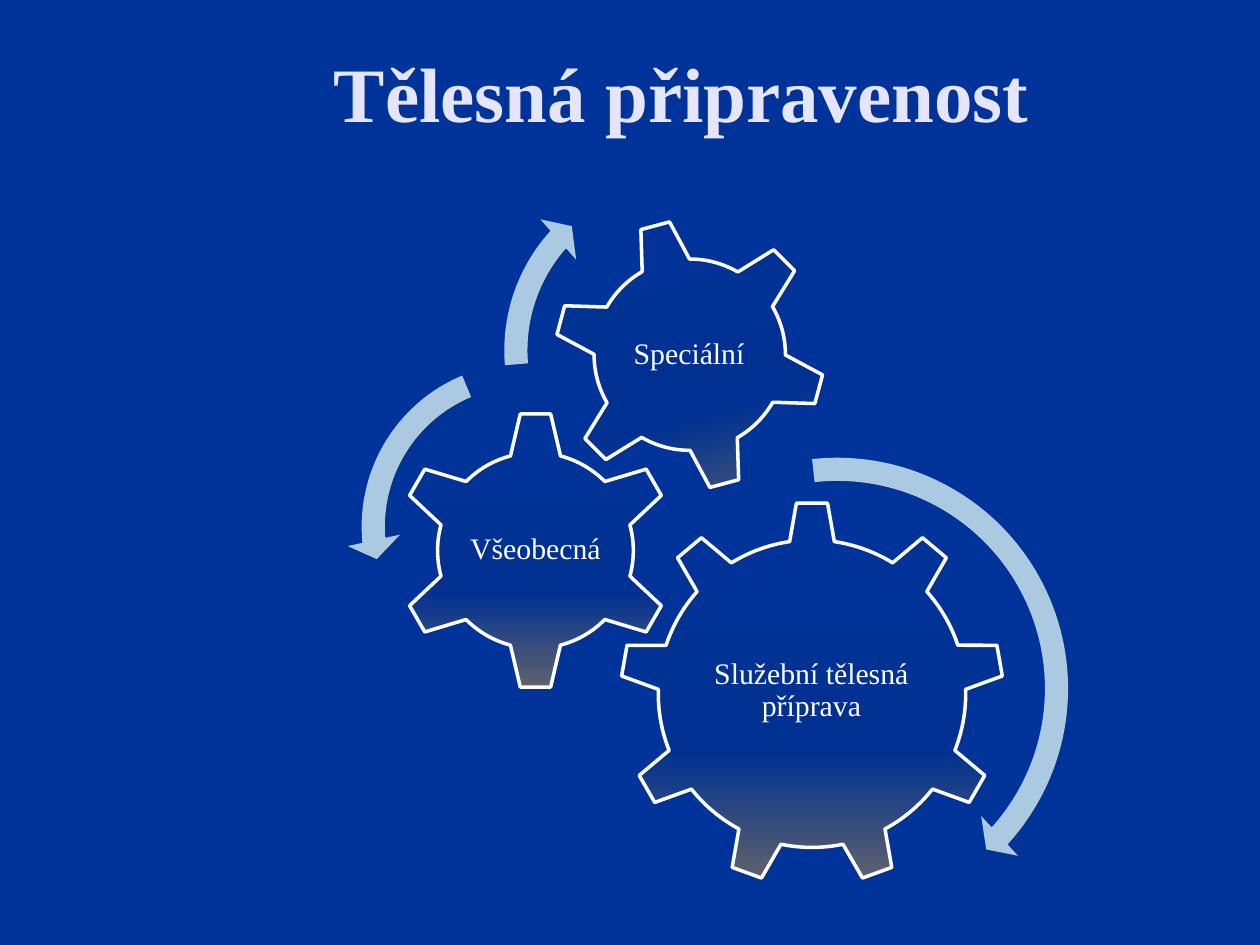
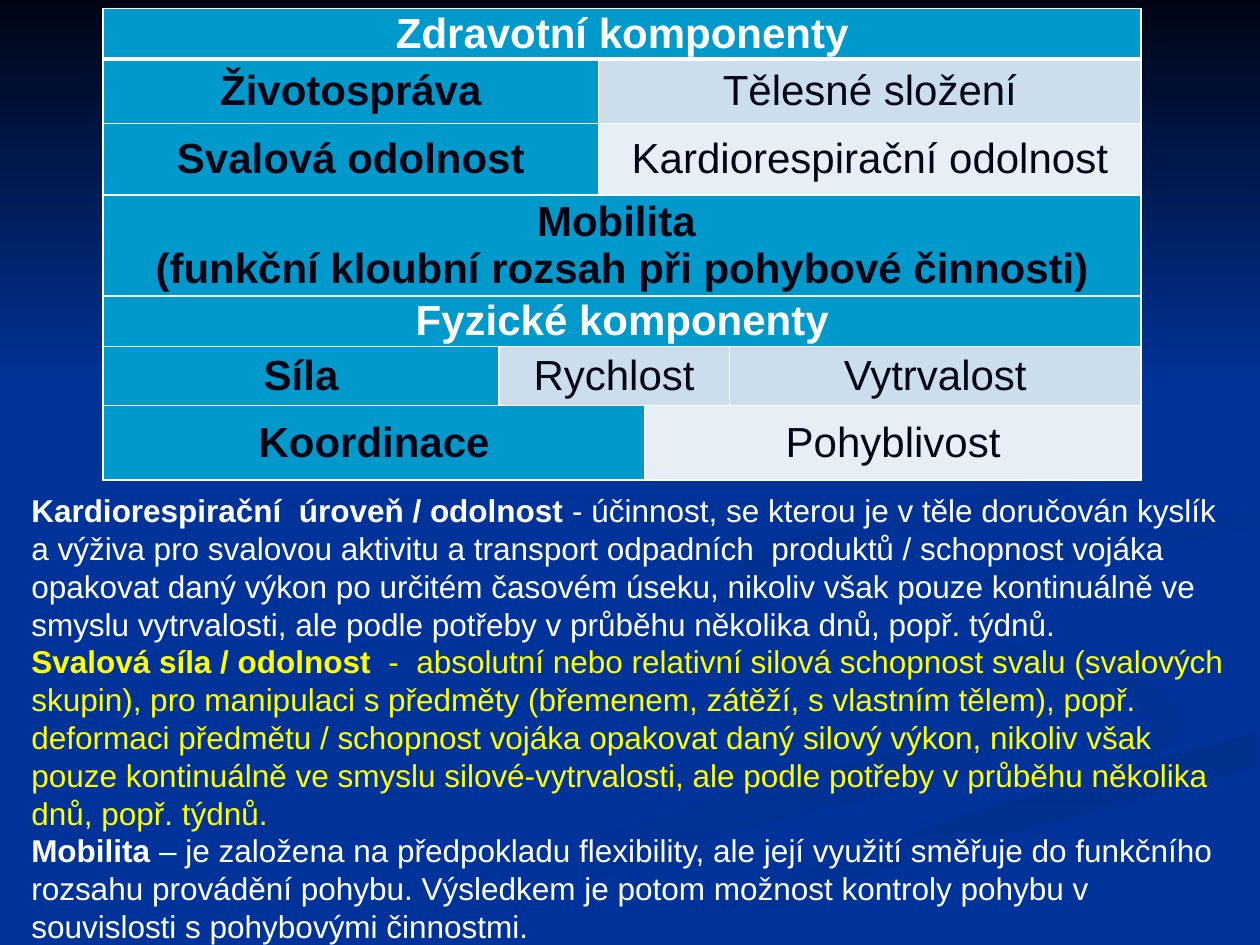
from lxml import etree
from pptx import Presentation
from pptx.dml.color import RGBColor
from pptx.enum.shapes import MSO_SHAPE
from pptx.enum.text import MSO_ANCHOR, PP_ALIGN
from pptx.oxml import parse_xml
from pptx.oxml.ns import nsdecls, qn
from pptx.util import Pt

CENTER = PP_ALIGN.CENTER
MIDDLE = MSO_ANCHOR.MIDDLE
GEAR_6 = MSO_SHAPE.GEAR_6
GEAR_9 = MSO_SHAPE.GEAR_9
ARROW = MSO_SHAPE.CIRCULAR_ARROW
LEFT_ARROW = MSO_SHAPE.LEFT_CIRCULAR_ARROW
RECTANGLE = MSO_SHAPE.RECTANGLE

SERIF = "Times New Roman"
SANS = "Arial"
COLORS = {
    "background": "003399",
    "night": "000514",
    "title": "E5E5FF",
    "white": "FFFFFF",
    "yellow": "FFFF00",
    "gear_mid": "003192",
    "gear_end": "646468",
    "arrow": "ABCAE2",
    "header": "0099CC",
    "pale": "CCDEEC",
    "paler": "E7EFF6",
    "swoosh": "003193",
    "swoosh_dark": "002F8C",
    "swoosh_soft": "003091",
}


def paint(shape, stops, angle=0):
    shape.shadow.inherit = False
    shape.line.fill.background()
    shape.fill.solid()
    shape.fill.fore_color.rgb = RGBColor.from_string(COLORS[stops[0][1]])
    if len(stops) > 1:
        marks = "".join(
            f'<a:gs pos="{pos * 1000}"><a:srgbClr val="{COLORS[color]}"/></a:gs>'
            for pos, color in stops)
        solid = shape._element.spPr.find(qn("a:solidFill"))
        solid.getparent().replace(solid, parse_xml(
            f'<a:gradFill rotWithShape="1" {nsdecls("a")}><a:gsLst>{marks}</a:gsLst>'
            f'<a:lin ang="{angle * 60000}" scaled="0"/></a:gradFill>'))


def style(font, size, face, color, bold=False):
    font.size = Pt(size)
    font.name = face
    font.bold = bold
    font.color.rgb = RGBColor.from_string(COLORS[color])


prs = Presentation()
prs.slide_width, prs.slide_height = Pt(720), Pt(540)
backdrop = prs.slide_master.background.fill
backdrop.solid()
backdrop.fore_color.rgb = RGBColor.from_string(COLORS["background"])
blank = prs.slide_layouts[6]

fitness = prs.slides.add_slide(blank)
title = fitness.shapes.add_textbox(Pt(129.6), Pt(16.6), Pt(520), Pt(72)).text_frame
title.word_wrap = True
title.vertical_anchor = MIDDLE
title.text = "Tělesná připravenost"
title.paragraphs[0].alignment = CENTER
style(title.paragraphs[0].runs[0].font, 44, SERIF, "title", True)

gears = [
    ("Služební tělesná příprava", GEAR_9, (354.2, 286.6, 219.6), 0, (398.2, 338.4, 131, 113)),
    ("Všeobecná", GEAR_6, (226.1, 234.7, 159.8), 0, (266.4, 275, 79.2, 78.5)),
    ("Speciální", GEAR_6, (316.1, 124.6, 156.2), 345, (349.9, 159.1, 87.8, 87.8)),
]
for label, kind, (left, top, side), turn, label_box in gears:
    gear = fitness.shapes.add_shape(kind, Pt(left), Pt(top), Pt(side), Pt(side))
    gear.rotation = turn
    paint(gear, [(0, "background"), (65, "gear_mid"), (100, "gear_end")], 90)
    gear.line.color.rgb = RGBColor.from_string(COLORS["white"])
    gear.line.width = Pt(2)
    caption = fitness.shapes.add_textbox(*[Pt(v) for v in label_box]).text_frame
    caption.word_wrap = True
    caption.vertical_anchor = MIDDLE
    caption.margin_left = caption.margin_right = Pt(1.5)
    caption.margin_top = caption.margin_bottom = Pt(1.5)
    caption.text = label
    caption.paragraphs[0].alignment = CENTER
    caption.paragraphs[0].line_spacing = 0.9
    style(caption.paragraphs[0].runs[0].font, 17, SERIF, "white")

rotations = [
    (ARROW, (337.7, 252.7, 281.5), (0.047, 2.99, 25.338, 158.238, 0.055)),
    (LEFT_ARROW, (198, 198.7, 204.5), (0.065, 4.3, 104.891, 148.378, 0.075)),
    (ARROW, (279.4, 90, 220.3), (0.06, 3.941, 133.138, 105.082, 0.07)),
]
for kind, (left, top, side), bends in rotations:
    rotation = fitness.shapes.add_shape(kind, Pt(left), Pt(top), Pt(side), Pt(side))
    paint(rotation, [(0, "arrow")])
    for index, bend in enumerate(bends):
        rotation.adjustments[index] = bend

components = prs.slides.add_slide(blank)
swooshes = [
    ("background", "swoosh", 0, [
        (413, 331), (411, 343), (440, 360), (535, 389), (565, 405), (555, 420),
        (417, 452), (300, 490), (216, 539), (260, 539), (383, 485), (555, 442),
        (575, 420), (562, 398), (442, 361)]),
    ("background", "swoosh", 45, [
        (521, 334), (537, 360), (634, 389), (661, 412), (644, 436), (675, 424),
        (676, 405), (652, 389), (546, 358)]),
    ("swoosh_dark", "background", 90, [
        (362, 539), (411, 539), (500, 498), (718, 438), (718, 418), (550, 466),
        (431, 508)]),
    ("swoosh_soft", "background", 45, [
        (562, 331), (570, 344), (595, 357), (580, 340), (607, 323), (718, 302),
        (718, 290), (591, 315)]),
    ("swoosh_dark", "background", 45, [
        (492, 310), (595, 290), (640, 261), (634, 221), (549, 168), (623, 210),
        (638, 250), (606, 272), (435, 312), (415, 333), (448, 360), (427, 338),
        (449, 320)]),
]
for first, last, angle, points in swooshes:
    outline = components.shapes.build_freeform(*points[0], scale=Pt(1))
    outline.add_line_segments(points[1:], close=True)
    paint(outline.convert_to_shape(), [(0, first), (100, last)], angle)
sky = components.shapes.add_shape(RECTANGLE, 0, 0, Pt(720), Pt(221.8))
paint(sky, [(0, "night"), (100, "background")], 90)

column_widths = [226.1, 56.9, 26.6, 48.2, 235.4]
row_heights = [26.6, 36.7, 41, 55.4, 26.6, 33.8, 42.5]
component_rows = [
    [("Zdravotní komponenty", 5, "header", "white")],
    [("Životospráva", 2, "header", "night"), ("Tělesné složení", 3, "pale", "night")],
    [("Svalová odolnost", 2, "header", "night"),
     ("Kardiorespirační odolnost", 3, "paler", "night")],
    [("Mobilita \n(funkční kloubní rozsah při pohybové činnosti)", 5, "header", "night")],
    [("Fyzické komponenty", 5, "header", "white")],
    [("Síla", 1, "header", "night"), ("Rychlost", 3, "pale", "night"),
     ("Vytrvalost", 1, "pale", "night")],
    [("Koordinace", 3, "header", "night"), ("Pohyblivost", 2, "paler", "night")],
]
table = components.shapes.add_table(
    len(row_heights), len(column_widths), Pt(59), Pt(5),
    Pt(sum(column_widths)), Pt(sum(row_heights))).table
table.first_row = table.horz_banding = False
for column, width in zip(table.columns, column_widths):
    column.width = Pt(width)
for row, height in zip(table.rows, row_heights):
    row.height = Pt(height)

for r, entries in enumerate(component_rows):
    start = 0
    for text, span, fill, color in entries:
        for c in range(start, start + span):
            cell = table.cell(r, c)
            cell.fill.solid()
            cell.fill.fore_color.rgb = RGBColor.from_string(COLORS[fill])
            cell.margin_left = cell.margin_right = Pt(5)
            cell.margin_top = cell.margin_bottom = 0
            cell.vertical_anchor = MIDDLE
            properties = cell._tc.get_or_add_tcPr()
            for position, edge in enumerate(["lnL", "lnR", "lnT", "lnB"]):
                heavy = (r, edge) in [(0, "lnB"), (1, "lnT")]
                border = etree.Element(qn(f"a:{edge}"), w=str(Pt(3 if heavy else 1)))
                ink = etree.SubElement(border, qn("a:solidFill"))
                etree.SubElement(ink, qn("a:srgbClr"), val=COLORS["white"])
                properties.insert(position, border)
        head = table.cell(r, start)
        if span > 1:
            head.merge(table.cell(r, start + span - 1))
        head.text_frame.text = text
        for paragraph in head.text_frame.paragraphs:
            paragraph.alignment = CENTER
            style(paragraph.runs[0].font, 24, SANS, color, fill == "header")
        start += span

definitions = [
    ("white", "Kardiorespirační  úroveň / odolnost",
     " - účinnost, se kterou je v těle doručován kyslík a výživa pro svalovou aktivitu "
     "a transport odpadních  produktů / schopnost vojáka opakovat daný výkon po určitém "
     "časovém úseku, nikoliv však pouze kontinuálně ve smyslu vytrvalosti, ale podle "
     "potřeby v průběhu několika dnů, popř. týdnů."),
    ("yellow", "Svalová síla / odolnost  ",
     "-  absolutní nebo relativní silová schopnost svalu (svalových skupin), pro "
     "manipulaci s předměty (břemenem, zátěží, s vlastním tělem), popř. deformaci "
     "předmětu / schopnost vojáka opakovat daný silový výkon, nikoliv však pouze "
     "kontinuálně ve smyslu silové-vytrvalosti, ale podle potřeby v průběhu několika "
     "dnů, popř. týdnů."),
    ("white", "Mobilita ",
     "– je založena na předpokladu flexibility, ale její využití směřuje do funkčního "
     "rozsahu provádění pohybu. Výsledkem je potom možnost kontroly pohybu "
     "v souvislosti s pohybovými činnostmi."),
]
glossary = components.shapes.add_textbox(Pt(10.8), Pt(277.2), Pt(697.7), Pt(269.3)).text_frame
glossary.word_wrap = True
for index, (color, term, meaning) in enumerate(definitions):
    paragraph = glossary.add_paragraph() if index else glossary.paragraphs[0]
    for text, bold in [(term, True), (meaning, False)]:
        run = paragraph.add_run()
        run.text = text
        style(run.font, 18, SANS, color, bold)

prs.save("out.pptx")
